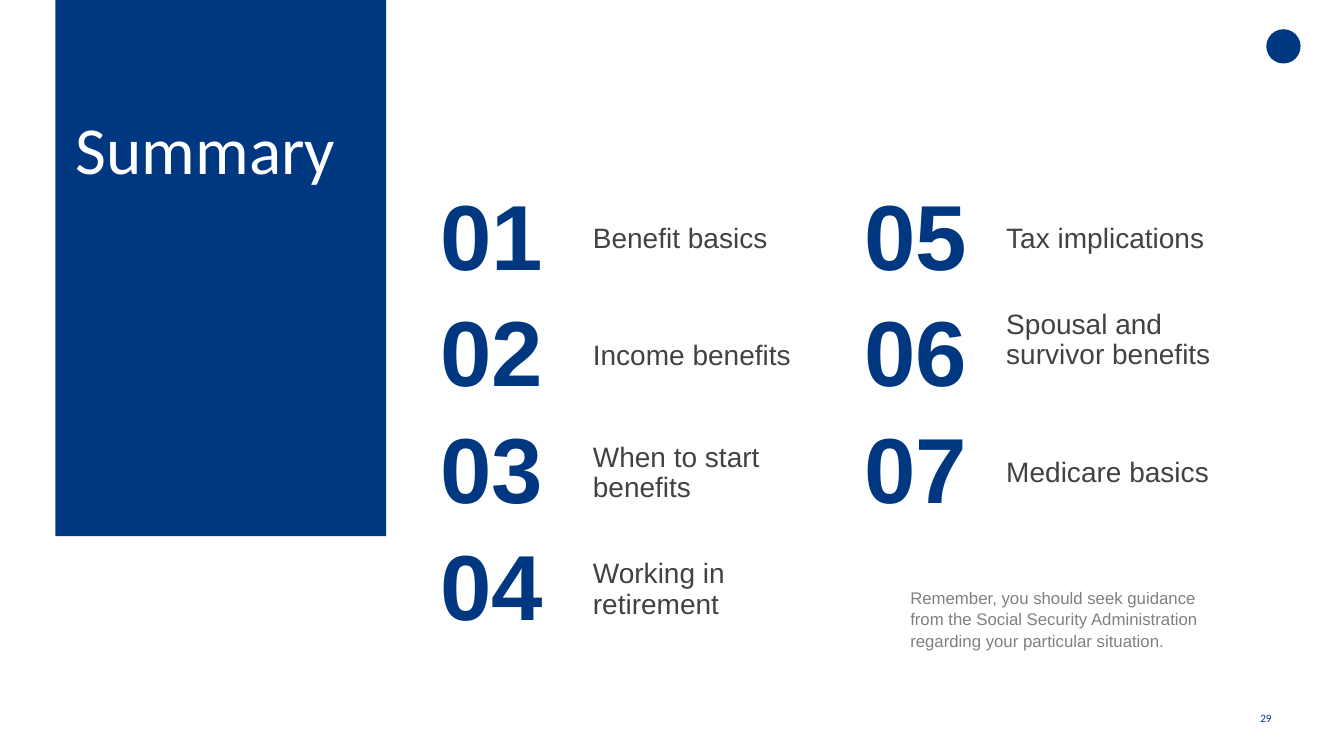
import pptx
import pptx.dml.color
import pptx.enum.shapes
import pptx.enum.text
import pptx.util

Inches = pptx.util.Inches
Align = pptx.enum.text.PP_ALIGN
Anchor = pptx.enum.text.MSO_ANCHOR

HEADING = "Summary"
TOPICS = [
    "Benefit basics",
    "Income benefits",
    "When to start benefits",
    "Working in retirement",
    "Tax implications",
    "Spousal and survivor benefits",
    "Medicare basics",
]
RAISED_TOPIC = "Spousal and survivor benefits"
REMINDER = (
    "Remember, you should seek guidance from the Social Security "
    "Administration regarding your particular situation."
)
PAGE = "29"

NAVY = "003781"
ROWS = 4
COLUMN_WIDTHS = [1.6, 2.7, 1.4, 2.7]
ROW_HEIGHT = 1.125

HEADING_STYLE = {"name": "Calibri", "size": 48, "color": "FFFFFF", "bold": False}
NUMBER_STYLE = {"name": "Arial", "size": 66, "color": NAVY, "bold": True}
TOPIC_STYLE = {"name": "Arial", "size": 20, "color": "424242", "bold": False}
REMINDER_STYLE = {"name": "Arial", "size": 12, "color": "808080", "bold": False}
PAGE_STYLE = {"name": "Calibri", "size": 8, "color": NAVY, "bold": False}


def rgb(value):
    return pptx.dml.color.RGBColor.from_string(value)


def box(left, top, width, height):
    return [Inches(length) for length in (left, top, width, height)]


def set_margins(holder, left, top, right, bottom):
    margins = {"left": left, "top": top, "right": right, "bottom": bottom}
    for side, length in margins.items():
        setattr(holder, "margin_" + side, Inches(length))


def write(frame, text, style, align=Align.LEFT, spacing=0.98, before=0):
    paragraph = frame.paragraphs[0]
    layout = {
        "alignment": align,
        "line_spacing": spacing,
        "space_before": pptx.util.Pt(before),
    }
    for attribute, value in layout.items():
        setattr(paragraph, attribute, value)
    run = paragraph.add_run()
    run.text = text
    for attribute, value in style.items():
        if attribute == "color":
            run.font.color.rgb = rgb(value)
        elif attribute == "size":
            run.font.size = pptx.util.Pt(value)
        else:
            setattr(run.font, attribute, value)


def add_heading(slide):
    heading = slide.shapes.title
    heading.left, heading.top, heading.width, heading.height = box(0.55, 0, 3.28, 5.32)
    heading.fill.solid()
    heading.fill.fore_color.rgb = rgb(NAVY)
    frame = heading.text_frame
    frame.auto_size = pptx.enum.text.MSO_AUTO_SIZE.NONE
    frame.vertical_anchor = Anchor.TOP
    set_margins(frame, 0.2, 1.1, 0.3, 0.05)
    write(frame, HEADING, HEADING_STYLE, before=6)


def add_topics(slide):
    place = box(4.08, 1.8, sum(COLUMN_WIDTHS), ROWS * ROW_HEIGHT)
    agenda = slide.shapes.add_table(ROWS, len(COLUMN_WIDTHS), *place).table
    agenda.first_row = agenda.horz_banding = False
    for column, width in zip(agenda.columns, COLUMN_WIDTHS):
        column.width = Inches(width)
    for cell in agenda.iter_cells():
        cell.fill.background()
        cell.vertical_anchor = Anchor.MIDDLE
    for index, topic in enumerate(TOPICS):
        pair, row = divmod(index, ROWS)
        number_cell = agenda.cell(row, 2 * pair)
        topic_cell = agenda.cell(row, 2 * pair + 1)
        set_margins(number_cell, 0.1, 0.04, 0.1, 0.04)
        set_margins(topic_cell, 0.2, 0.05, 0.1, 0.37 if topic == RAISED_TOPIC else 0.05)
        write(number_cell.text_frame, f"{index + 1:02d}", NUMBER_STYLE, Align.CENTER)
        write(topic_cell.text_frame, topic, TOPIC_STYLE)


def add_reminder(slide):
    frame = slide.shapes.add_textbox(*box(8.93, 5.77, 3.34, 0.71)).text_frame
    frame.word_wrap = True
    write(frame, REMINDER, REMINDER_STYLE, spacing=1.06)


def add_page_number(slide):
    frame = slide.shapes.add_textbox(*box(12.5, 6.92, 0.4, 0.4)).text_frame
    frame.word_wrap = True
    frame.vertical_anchor = Anchor.MIDDLE
    set_margins(frame, 0, 0.06, 0, 0.06)
    write(frame, PAGE, PAGE_STYLE, spacing=1.0)


def add_emblem(slide):
    oval = pptx.enum.shapes.MSO_SHAPE.OVAL
    emblem = slide.shapes.add_shape(oval, *box(12.56, 0.29, 0.34, 0.34))
    emblem.shadow.inherit = False
    emblem.fill.solid()
    emblem.fill.fore_color.rgb = rgb(NAVY)
    emblem.line.fill.background()


def main():
    deck = pptx.Presentation()
    deck.slide_width, deck.slide_height = Inches(13.33), Inches(7.5)
    slide = deck.slides.add_slide(deck.slide_layouts[5])
    for add_part in (add_emblem, add_page_number, add_heading, add_topics, add_reminder):
        add_part(slide)
    deck.save("out.pptx")


if __name__ == "__main__":
    main()
